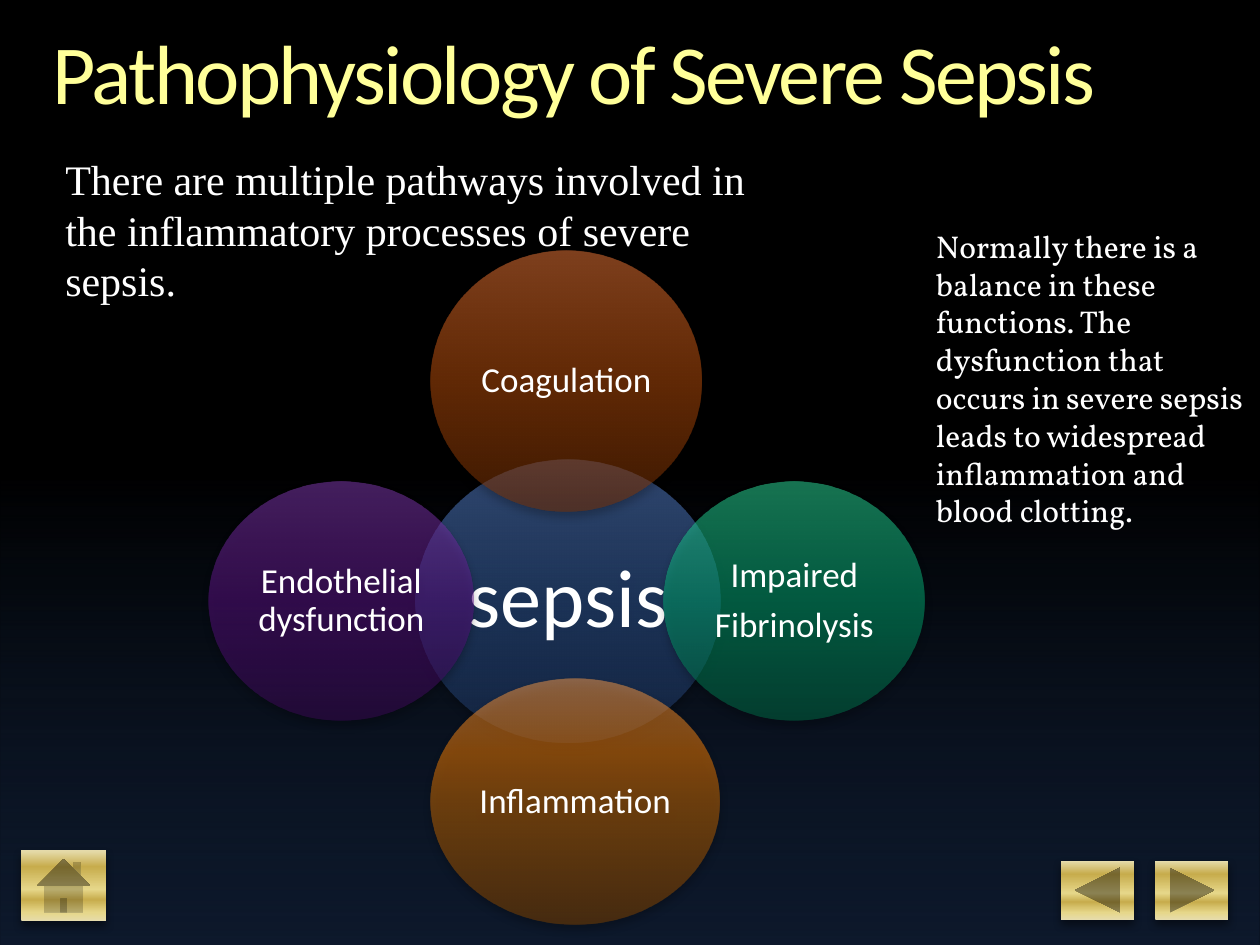
import pptx
import pptx.dml.color
import pptx.enum.shapes
import pptx.enum.text
import pptx.oxml
import pptx.oxml.ns
import pptx.util

Inches = pptx.util.Inches
Pt = pptx.util.Pt
Shape = pptx.enum.shapes.MSO_SHAPE
Align = pptx.enum.text.PP_ALIGN
Anchor = pptx.enum.text.MSO_ANCHOR
AutoSize = pptx.enum.text.MSO_AUTO_SIZE


class Theme:
    background = "000000"
    title_color = "FFFF99"
    text_color = "FFFFFF"
    title_size, center_size, intro_size, label_size, note_size = 48, 47, 24, 20, 18
    sans, serif, note_font = "Calibri", "Times New Roman", "Vollkorn"

    blue = ("1F3A67", "355FA3", "4772BA", "6190E1")
    rust = ("7D3203", "C4520B", "DB631C", "FF803C")
    green = ("006E49", "02AF75", "13C387", "30E9A4")
    orange = ("824400", "D16D00", "FE8100", "FFA04B")
    purple = ("3C0958", "5F128B", "6F229C", "8B3FBD")
    gold = ("E6DCAC", "E6D78A", "C7AC4C", "E6D78A", "C7AC4C", "E6DCAC")
    color_positions = (0, 50, 70, 100)
    gold_positions = (0, 12, 30, 45, 77, 100)


def rgb(value):
    return pptx.dml.color.RGBColor.from_string(value)


def gradient_stops(positions, colors, opacities):
    return list(zip(positions, colors, opacities))


class SlideBuilder:
    def __init__(self, slide, theme):
        self.slide = slide
        self.theme = theme
        background = slide.background.fill
        background.solid()
        background.fore_color.rgb = rgb(theme.background)

    def fill_text(self, shape, lines, font, size, color=None, margins=None, frame=None,
                  paragraph=None):
        """Put one paragraph per line in the shape and apply the format values."""
        text_frame = shape.text_frame
        text_frame.text = "\n".join(lines)
        values = {"word_wrap": True, **(frame or {})}
        if margins is not None:
            for side in ("left", "top", "right", "bottom"):
                values["margin_" + side] = Inches(margins)
        for name, value in values.items():
            setattr(text_frame, name, value)
        for item in text_frame.paragraphs:
            for name, value in (paragraph or {}).items():
                setattr(item, name, value)
            for run in item.runs:
                for name, value in {"name": font, "size": Pt(size)}.items():
                    setattr(run.font, name, value)
                run.font.color.rgb = rgb(color or self.theme.text_color)

    def title(self, text, box):
        shape = self.slide.shapes.title
        for name, value in zip(("left", "top", "width", "height"), box):
            setattr(shape, name, Inches(value))
        self.fill_text(shape, [text], self.theme.sans, self.theme.title_size,
                       self.theme.title_color, margins=0,
                       frame={"vertical_anchor": Anchor.TOP,
                              "auto_size": AutoSize.SHAPE_TO_FIT_TEXT},
                       paragraph={"alignment": Align.LEFT, "line_spacing": 0.9})
        run = shape.text_frame.paragraphs[0].runs[0]
        run.font._element.set("spc", "-150")

    def text(self, text, box, font, size):
        shape = self.slide.shapes.add_textbox(*map(Inches, box))
        self.fill_text(shape, [text], font, size,
                       frame={"auto_size": AutoSize.SHAPE_TO_FIT_TEXT})

    def gradient_shape(self, kind, box, stops):
        """Add a borderless shape whose gradient runs from bottom to top, with a soft shadow."""
        shape = self.slide.shapes.add_shape(kind, *map(Inches, box))
        shape.line.fill.background()
        shape.shadow.inherit = False
        namespace = pptx.oxml.ns.nsdecls("a")
        stop_xml = "".join(
            f'<a:gs pos="{position * 1000}"><a:srgbClr val="{color}">'
            f'<a:alpha val="{opacity * 1000}"/></a:srgbClr></a:gs>'
            for position, color, opacity in stops)
        gradient = pptx.oxml.parse_xml(
            f'<a:gradFill {namespace} rotWithShape="1"><a:gsLst>{stop_xml}</a:gsLst>'
            '<a:lin ang="16200000" scaled="0"/></a:gradFill>')
        properties = shape._element.spPr
        properties.find(pptx.oxml.ns.qn("a:prstGeom")).addnext(gradient)
        shadow = pptx.oxml.parse_xml(
            f'<a:outerShdw {namespace} blurRad="{Pt(5)}" dist="{Pt(3)}" dir="5400000" '
            'rotWithShape="0"><a:srgbClr val="000000"><a:alpha val="45000"/>'
            '</a:srgbClr></a:outerShdw>')
        properties.find(pptx.oxml.ns.qn("a:effectLst")).append(shadow)
        return shape

    def button(self, kind, box):
        theme = self.theme
        self.gradient_shape(kind, box, gradient_stops(
            theme.gold_positions, theme.gold, [100] * len(theme.gold)))

    def circle(self, lines, box, colors, size):
        shape = self.gradient_shape(Shape.OVAL, box, gradient_stops(
            self.theme.color_positions, colors, [50] * len(colors)))
        self.fill_text(shape, lines, self.theme.sans, size, margins=0,
                       frame={"vertical_anchor": Anchor.MIDDLE},
                       paragraph={"alignment": Align.CENTER, "line_spacing": 0.9})
        for paragraph in shape.text_frame.paragraphs[:-1]:
            paragraph.space_after = Pt(0.35 * size)


def main():
    presentation = pptx.Presentation()
    presentation.slide_width = Inches(10)
    presentation.slide_height = Inches(7.5)
    theme = Theme()
    builder = SlideBuilder(
        presentation.slides.add_slide(presentation.slide_layouts[5]), theme)

    builder.gradient_shape(Shape.RECTANGLE, (0, 0.08, 10, 7.42), gradient_stops(
        theme.color_positions, theme.blue, (42, 0, 0, 0)))
    for kind, box in (
            (Shape.ACTION_BUTTON_FORWARD_OR_NEXT, (9.17, 6.83, 0.58, 0.47)),
            (Shape.ACTION_BUTTON_BACK_OR_PREVIOUS, (8.42, 6.83, 0.58, 0.47)),
            (Shape.ACTION_BUTTON_HOME, (0.17, 6.75, 0.67, 0.56))):
        builder.button(kind, box)

    builder.title("Pathophysiology of Severe Sepsis", (0.42, 0.25, 9.17, 0.73))
    builder.text("There are multiple pathways involved in the inflammatory processes "
                 "of severe sepsis.", (0.42, 1.17, 5.83, 1.31),
                 theme.serif, theme.intro_size)

    for lines, box, colors, size in (
            (["sepsis"], (3.3, 3.65, 2.42, 2.24), theme.blue, theme.center_size),
            (["Coagulation"], (3.42, 1.99, 2.15, 2.07), theme.rust, theme.label_size),
            (["Impaired", "Fibrinolysis"], (5.27, 3.82, 2.07, 1.9), theme.green,
             theme.label_size),
            (["Inflammation"], (3.42, 5.39, 2.29, 1.95), theme.orange, theme.label_size),
            (["Endothelial dysfunction"], (1.66, 3.82, 2.1, 1.9), theme.purple,
             theme.label_size)):
        builder.circle(lines, box, colors, size)

    builder.text("Normally there is a balance in these functions. The dysfunction that "
                 "occurs in severe sepsis leads to widespread inflammation and blood "
                 "clotting.", (7.33, 1.75, 2.67, 2.52), theme.note_font, theme.note_size)
    presentation.save("out.pptx")


if __name__ == "__main__":
    main()
